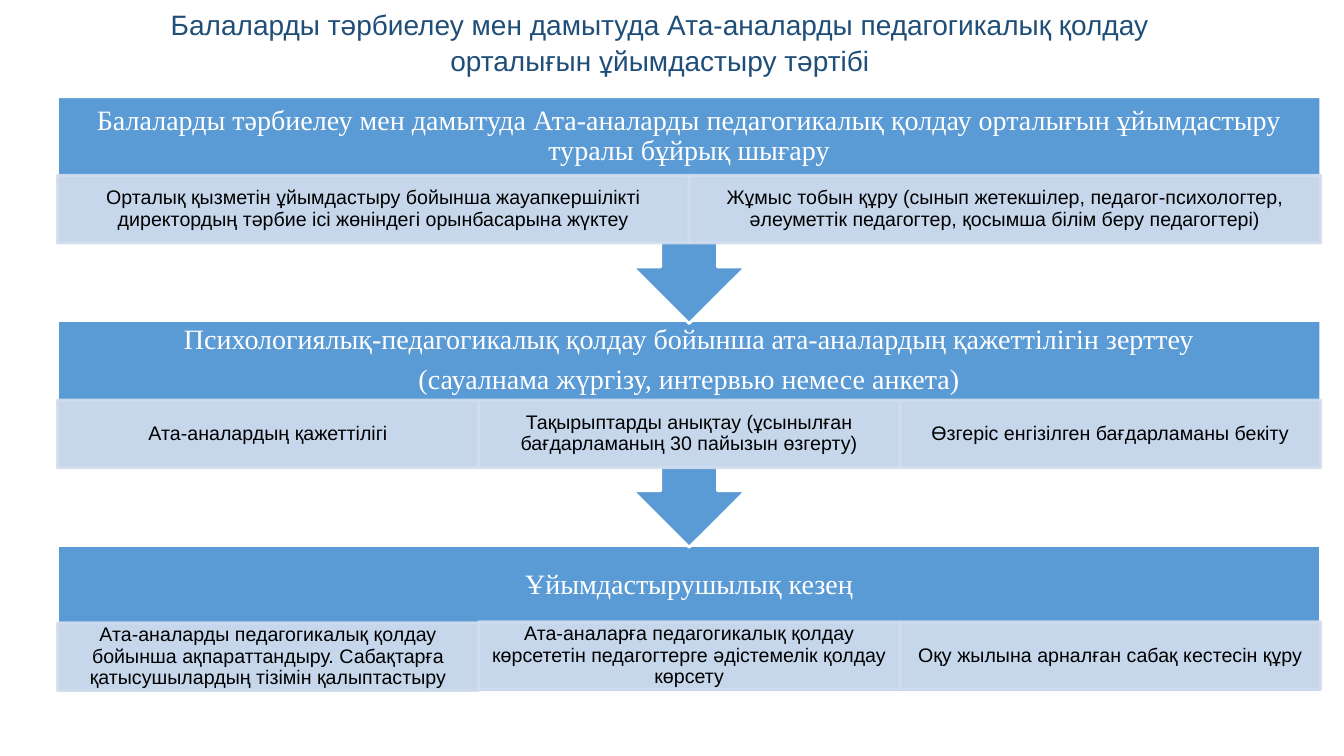
import pptx
import pptx.dml.color
import pptx.enum.shapes
import pptx.enum.text
import pptx.oxml.ns
import pptx.util
from lxml import etree
from pptx.util import Inches

COLORS = {
    "stage": "5B9BD5",
    "step": "D2DEEF",
    "white": "FFFFFF",
    "black": "000000",
    "title": "1F4E79",
}
LEFT, WIDTH = 0.57, 12.53
HEADING_HEIGHT, STEP_HEIGHT = 0.79, 0.67
SHAPES = pptx.enum.shapes.MSO_SHAPE
ANCHORS = pptx.enum.text.MSO_ANCHOR

TITLE = ("Балаларды тәрбиелеу мен дамытуда Ата-аналарды педагогикалық "
         "қолдау орталығын ұйымдастыру тәртібі")
STAGES = [
    {
        "shape": SHAPES.UP_ARROW_CALLOUT, "top": 0.96, "height": 2.25, "step_top": 1.74,
        "heading": "Балаларды тәрбиелеу мен дамытуда Ата-аналарды педагогикалық "
                   "қолдау орталығын ұйымдастыру туралы бұйрық шығару",
        "steps": [
            "Орталық қызметін ұйымдастыру бойынша жауапкершілікті директордың "
            "тәрбие ісі жөніндегі орынбасарына жүктеу",
            "Жұмыс тобын құру (сынып жетекшілер, педагог-психологтер, "
            "әлеуметтік педагогтер, қосымша білім беру педагогтері)",
        ],
    },
    {
        "shape": SHAPES.UP_ARROW_CALLOUT, "top": 3.18, "height": 2.25, "step_top": 3.97,
        "heading": "Психологиялық-педагогикалық қолдау бойынша ата-аналардың "
                   "қажеттілігін зерттеу\n(сауалнама жүргізу, интервью немесе анкета)",
        "steps": [
            "Ата-аналардың қажеттілігі",
            "Тақырыптарды анықтау (ұсынылған бағдарламаның 30 пайызын өзгерту)",
            "Өзгеріс енгізілген бағдарламаны бекіту",
        ],
    },
    {
        "shape": SHAPES.RECTANGLE, "top": 5.41, "height": 1.46, "step_top": 6.17,
        "first_step_top": 6.18,
        "heading": "Ұйымдастырушылық кезең",
        "steps": [
            "Ата-аналарды педагогикалық қолдау бойынша ақпараттандыру. "
            "Сабақтарға қатысушылардың тізімін қалыптастыру",
            "Ата-аналарға педагогикалық қолдау көрсететін педагогтерге "
            "әдістемелік қолдау көрсету",
            "Оқу жылына арналған сабақ кестесін құру",
        ],
    },
]


class StageSlide:
    def __init__(self, deck):
        self.page = deck.slides.add_slide(deck.slide_layouts[5])

    def color(self, name):
        return pptx.dml.color.RGBColor.from_string(COLORS[name])

    def set_text(self, box, text, font, size, color, margins, spacing=0.9, after=0.35,
                 anchor=ANCHORS.MIDDLE):
        frame = box.text_frame
        frame.text = text
        frame.word_wrap = True
        frame.auto_size = pptx.enum.text.MSO_AUTO_SIZE.NONE
        frame.vertical_anchor = anchor
        frame.margin_left = frame.margin_right = Inches(margins[0])
        frame.margin_top = frame.margin_bottom = Inches(margins[1])
        for para in frame.paragraphs:
            para.alignment = pptx.enum.text.PP_ALIGN.CENTER
            para.line_spacing = spacing
            para.space_before = pptx.util.Pt(0)
            para.space_after = pptx.util.Pt(size * after)
            for span in para.runs:
                span.font.name = font
                span.font.size = pptx.util.Pt(size)
                span.font.color.rgb = self.color(color)

    def title(self, text):
        box = self.page.shapes.title
        box.left, box.top = Inches(0.94), Inches(0)
        box.width, box.height = Inches(10.71), Inches(0.8)
        self.set_text(box, text, "Arial", 20, "title", (0.1, 0.05), 1.07, 0, ANCHORS.TOP)
        properties = box.text_frame.paragraphs[0]._p.get_or_add_pPr()
        properties.set("marL", str(Inches(0.5)))
        properties.set("indent", "0")

    def block(self, kind, left, top, width, height, fill, line):
        box = self.page.shapes.add_shape(
            kind, Inches(left), Inches(top), Inches(width), Inches(height))
        box.shadow.inherit = False
        box.fill.solid()
        box.fill.fore_color.rgb = self.color(fill)
        box.line.color.rgb = self.color(line)
        box.line.width = pptx.util.Pt(2)
        return box

    def heading(self, text, top):
        box = self.page.shapes.add_textbox(
            Inches(LEFT), Inches(top), Inches(WIDTH), Inches(HEADING_HEIGHT))
        self.set_text(box, text, "Times New Roman", 20, "white", (0.16, 0.16))

    def step(self, text, left, top, width):
        box = self.block(SHAPES.RECTANGLE, left, top, width, STEP_HEIGHT, "step", "step")
        alpha = pptx.oxml.ns.qn("a:alpha")
        for color in box._element.spPr.iter(pptx.oxml.ns.qn("a:srgbClr")):
            etree.SubElement(color, alpha).set("val", "90000")
        self.set_text(box, text, "Arial", 14, "black", (0.11, 0.02))

    def stage(self, data):
        box = self.block(data["shape"], LEFT, data["top"], WIDTH, data["height"],
                         "stage", "white")
        if data["shape"] == SHAPES.UP_ARROW_CALLOUT:
            box.rotation = 180
        self.heading(data["heading"], data["top"])
        width = WIDTH / len(data["steps"])
        for index, text in enumerate(data["steps"]):
            top = data["step_top"]
            if index == 0:
                top = data.get("first_step_top", top)
            self.step(text, LEFT + index * width, top, width)


def main():
    deck = pptx.Presentation()
    deck.slide_width, deck.slide_height = Inches(13.33), Inches(7.5)
    slide = StageSlide(deck)
    for data in reversed(STAGES):
        slide.stage(data)
    slide.title(TITLE)
    deck.save("out.pptx")


if __name__ == "__main__":
    main()
